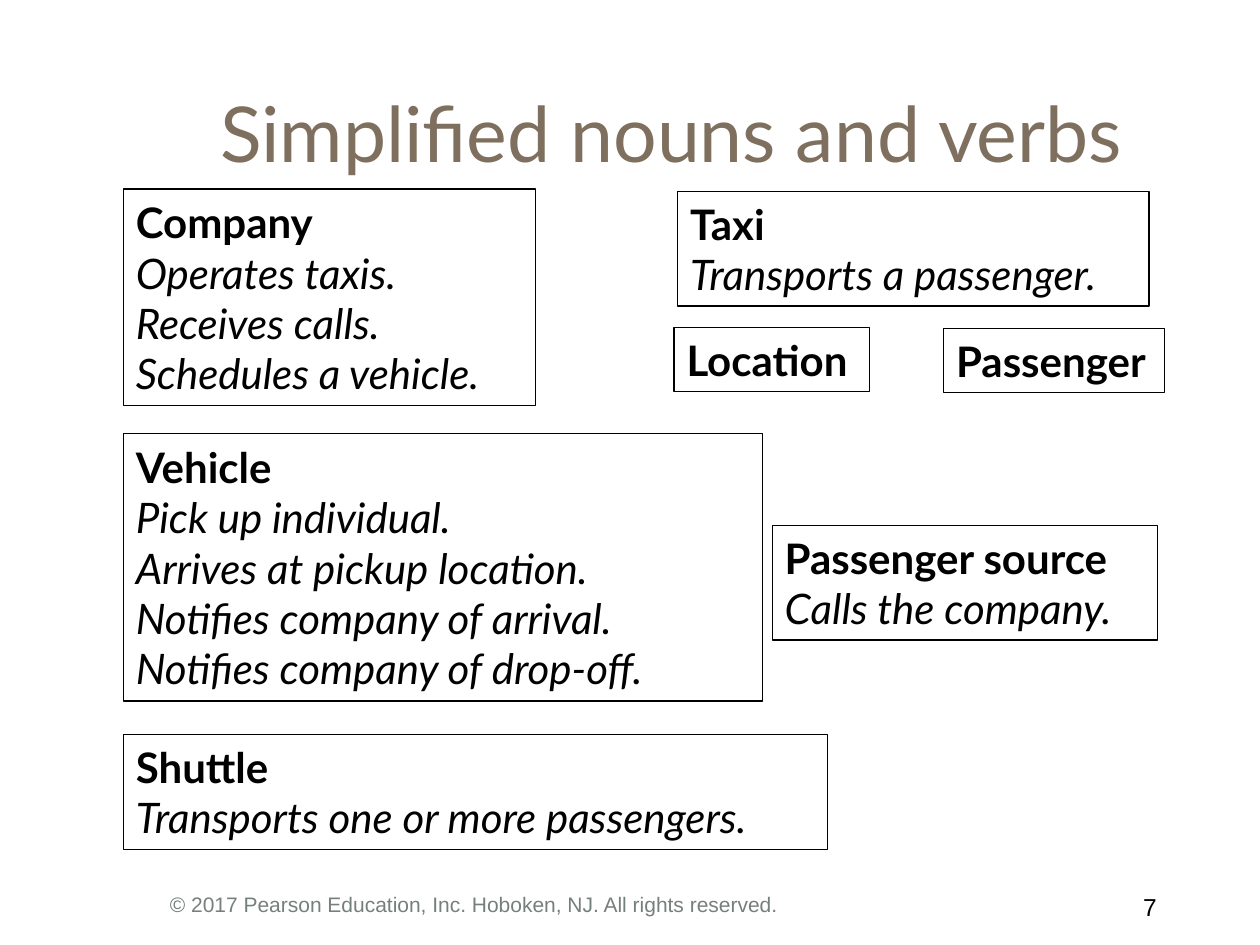
from dataclasses import dataclass

from pptx import Presentation
from pptx.dml.color import RGBColor
from pptx.enum.shapes import MSO_SHAPE as Shape
from pptx.enum.text import MSO_ANCHOR as Anchor, PP_ALIGN as Align
from pptx.util import Inches, Pt

# The slide is a grid of 100 columns by 75 rows.
CELL = Inches(0.1)
COLUMNS, ROWS = 100, 75
LINE_ROWS, PADDING_ROWS = 4.05, 1  # height of a card: its lines plus padding
LEFT_COLUMN = 9.8

COLORS = {"title": "7F6F5E", "ink": "000000", "footer": "76807A"}


@dataclass(frozen=True)
class Card:
    """A noun with its verbs."""
    noun: str
    verbs: tuple[str, ...]
    column: float
    row: float
    columns: float

    @property
    def rows(self) -> float:
        return PADDING_ROWS + LINE_ROWS * (1 + len(self.verbs))


CARDS = (
    Card("Company", ("Operates taxis.", "Receives calls.", "Schedules a vehicle."),
         LEFT_COLUMN, 15, 32.7),
    Card("Taxi", ("Transports a passenger.",), 53.8, 15.2, 37.4),
    Card("Shuttle", ("Transports one or more passengers.",), LEFT_COLUMN, 58.3, 55.9),
    Card("Passenger", (), 74.9, 26.1, 17.5),
    Card("Location", (), 53.5, 26, 15.5),
    Card("Vehicle", ("Pick up individual.", "Arrives at pickup location.",
                     "Notifies company of arrival.", "Notifies company of drop-off."),
         LEFT_COLUMN, 34.4, 50.7),
    Card("Passenger source", ("Calls the company.",), 61.3, 41.7, 30.6),
)


def cells(*counts: float) -> list[int]:
    return [round(count * CELL) for count in counts]


def write(paragraph, text: str, *, size: float, color: str = "ink", font: str = "Lato",
          bold: bool = False, italic: bool = False, align=Align.LEFT) -> None:
    paragraph.alignment = align
    run = paragraph.add_run()
    run.text = text
    run.font.name = font
    run.font.size = Pt(size)
    run.font.bold = bold
    run.font.italic = italic
    run.font.color.rgb = RGBColor.from_string(COLORS[color])


def add_label(slide, text: str, column: float, row: float, columns: float, rows: float,
              anchor=Anchor.TOP, **text_format) -> None:
    frame = slide.shapes.add_textbox(*cells(column, row, columns, rows)).text_frame
    frame.word_wrap = True
    frame.vertical_anchor = anchor
    write(frame.paragraphs[0], text, **text_format)


def add_card(slide, card: Card) -> None:
    box = slide.shapes.add_shape(
        Shape.RECTANGLE, *cells(card.column, card.row, card.columns, card.rows))
    box.shadow.inherit = False
    box.fill.background()
    box.line.color.rgb = RGBColor.from_string(COLORS["ink"])
    box.line.width = Pt(0.75)
    frame = box.text_frame
    frame.word_wrap = True
    frame.vertical_anchor = Anchor.MIDDLE
    write(frame.paragraphs[0], card.noun, size=24, bold=True)
    for verb in card.verbs:
        write(frame.add_paragraph(), verb, size=24, italic=True)


def main() -> None:
    deck = Presentation()
    deck.slide_width, deck.slide_height = cells(COLUMNS, ROWS)
    slide = deck.slides.add_slide(deck.slide_layouts[6])

    add_label(slide, "7", 87.5, 70.3, 5.3, 3.3, size=14, font="Arial", align=Align.RIGHT)
    add_label(slide, "Simplified nouns and verbs", 10.8, 4.2, 85, 12.5,
              anchor=Anchor.MIDDLE, size=44, color="title", align=Align.CENTER)
    add_label(slide, "© 2017 Pearson Education, Inc. Hoboken, NJ. All rights reserved.",
              12.5, 70.3, 75.8, 3.3, size=12, font="Arial", color="footer")
    for card in CARDS:
        add_card(slide, card)

    deck.save("out.pptx")


if __name__ == "__main__":
    main()
